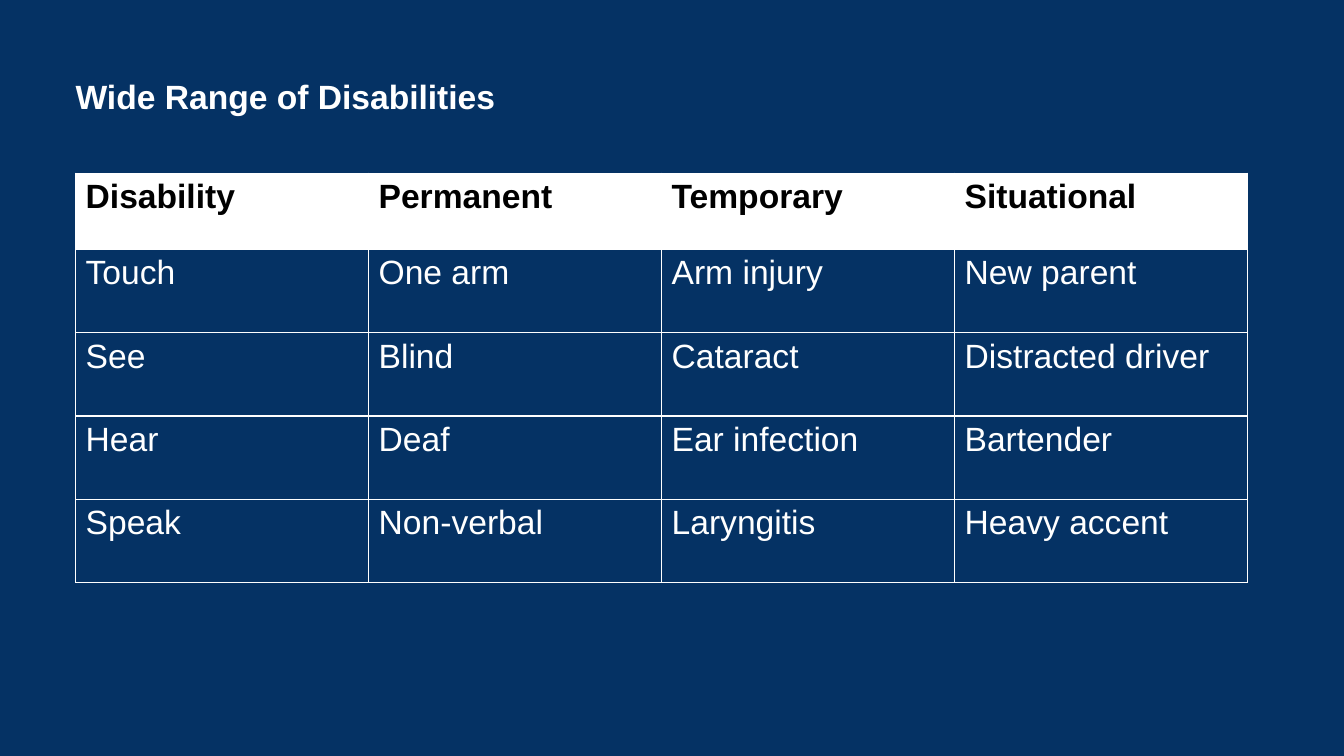
from dataclasses import dataclass

from lxml.etree import SubElement
from pptx import Presentation
from pptx.dml.color import RGBColor
from pptx.oxml.ns import qn
from pptx.util import Pt

HEADING = "Wide Range of Disabilities"
DISABILITIES = [
    ("Disability", "Permanent", "Temporary", "Situational"),
    ("Touch", "One arm", "Arm injury", "New parent"),
    ("See", "Blind", "Cataract", "Distracted driver"),
    ("Hear", "Deaf", "Ear infection", "Bartender"),
    ("Speak", "Non-verbal", "Laryngitis", "Heavy accent"),
]


@dataclass(frozen=True)
class Theme:
    navy: str = "053264"
    white: str = "FFFFFF"
    black: str = "000000"
    font: str = "Arial"
    size: float = 24
    border: float = 1


THEME = Theme()
SLIDE_WIDTH, SLIDE_HEIGHT = 960, 540
LEFT = 54
HEADING_TOP, HEADING_WIDTH, HEADING_HEIGHT = 54, 852.5, 29
TABLE_TOP = 123.8
COLUMN_WIDTH = 209.3
HEADER_HEIGHT, BODY_HEIGHT = 54.4, 59.5


def write(paragraph, wording, color, bold):
    run = paragraph.add_run()
    run.text = wording
    run.font.name = THEME.font
    run.font.size = Pt(THEME.size)
    run.font.bold = bold
    run.font.color.rgb = RGBColor.from_string(color)


def add_borders(cell):
    properties = cell._tc.get_or_add_tcPr()
    for position, side in enumerate(("lnL", "lnR", "lnT", "lnB")):
        line = SubElement(properties, qn(f"a:{side}"), w=str(Pt(THEME.border)))
        fill = SubElement(line, qn("a:solidFill"))
        SubElement(fill, qn("a:srgbClr"), val=THEME.white)
        properties.insert(position, line)


def add_heading(slide):
    heading = slide.shapes.add_textbox(
        Pt(LEFT), Pt(HEADING_TOP), Pt(HEADING_WIDTH), Pt(HEADING_HEIGHT)
    )
    frame = heading.text_frame
    frame.word_wrap = True
    frame.margin_left = frame.margin_right = Pt(0)
    frame.margin_top = frame.margin_bottom = Pt(0)
    write(frame.paragraphs[0], HEADING, THEME.white, True)


def add_disabilities(slide):
    row_count, column_count = len(DISABILITIES), len(DISABILITIES[0])
    heights = [HEADER_HEIGHT] + [BODY_HEIGHT] * (row_count - 1)
    table = slide.shapes.add_table(
        row_count, column_count, Pt(LEFT), Pt(TABLE_TOP),
        Pt(COLUMN_WIDTH * column_count), Pt(sum(heights)),
    ).table
    table.horz_banding = False
    for column in table.columns:
        column.width = Pt(COLUMN_WIDTH)
    for row_index, (entries, height) in enumerate(zip(DISABILITIES, heights)):
        table.rows[row_index].height = Pt(height)
        is_header = row_index == 0
        background = THEME.white if is_header else THEME.navy
        color = THEME.black if is_header else THEME.white
        for column_index, entry in enumerate(entries):
            cell = table.cell(row_index, column_index)
            cell.fill.solid()
            cell.fill.fore_color.rgb = RGBColor.from_string(background)
            write(cell.text_frame.paragraphs[0], entry, color, is_header)
            add_borders(cell)


def main():
    presentation = Presentation()
    presentation.slide_width = Pt(SLIDE_WIDTH)
    presentation.slide_height = Pt(SLIDE_HEIGHT)
    slide = presentation.slides.add_slide(presentation.slide_layouts[6])
    slide.background.fill.solid()
    slide.background.fill.fore_color.rgb = RGBColor.from_string(THEME.navy)
    add_heading(slide)
    add_disabilities(slide)
    presentation.save("out.pptx")


if __name__ == "__main__":
    main()
